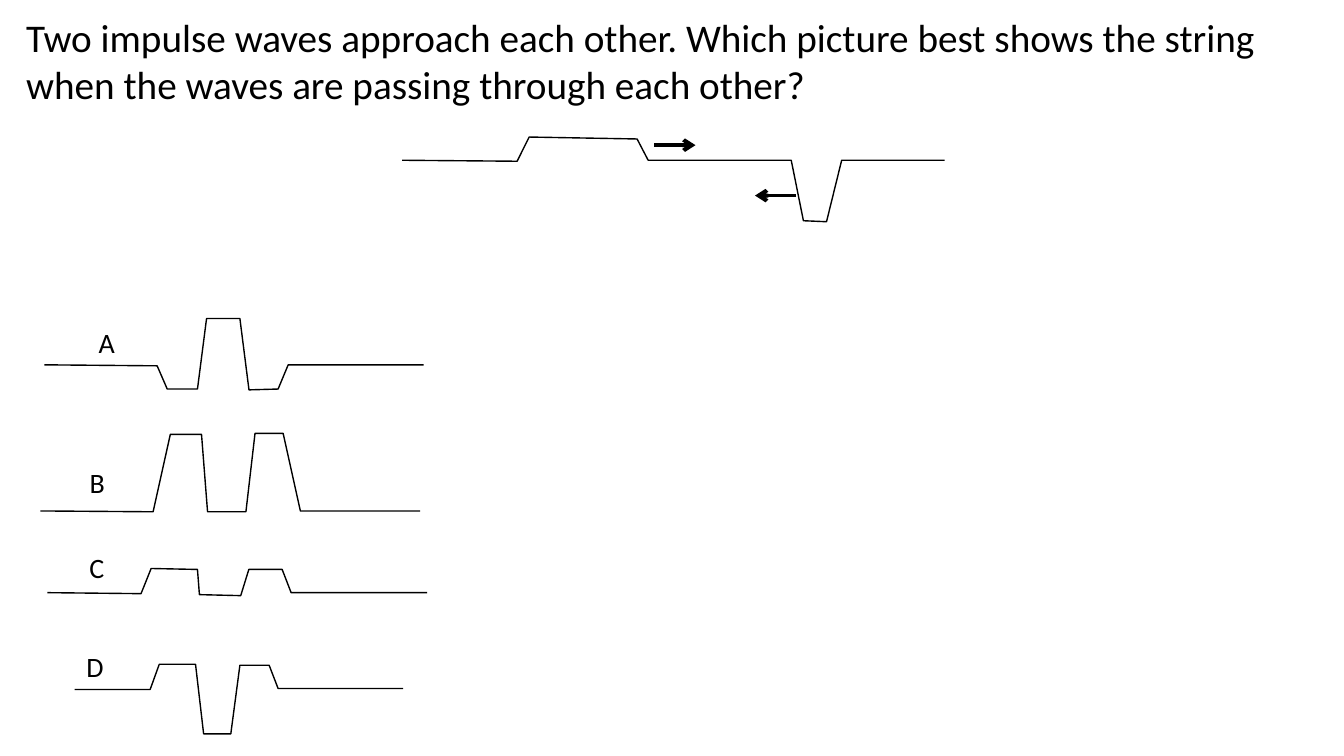
from dataclasses import dataclass

from lxml import etree
from pptx import Presentation
from pptx.dml.color import RGBColor
from pptx.enum import shapes, text
from pptx.oxml import ns
from pptx.util import Pt


@dataclass(frozen=True)
class Theme:
    ink: RGBColor = RGBColor(0, 0, 0)
    paper: RGBColor = RGBColor(255, 255, 255)
    font: str = "Calibri"
    question: float = 28
    label: float = 20
    string: float = 1
    arrow: float = 2.75


THEME = Theme()
QUESTION = ("Two impulse waves approach each other. Which picture best shows "
            "the string when the waves are passing through each other?")

# Corners of each string, measured from the top left of its box
APPROACHING = [(0, 16.6), (82.1, 17.3), (90.7, 0), (167.8, 1.4), (175.7, 16.6),
               (277.9, 16.6), (286.6, 59.8), (303.1, 60.5), (313.9, 16.6), (387.4, 16.6)]
# Start x, end x and y of each direction arrow, in the same box
DIRECTIONS = [(180, 209.5, 5.8), (281.5, 252, 41.8)]

# Letter, box corner, label offset, string corners
OPTIONS = [
    ("A", (31.7, 227.5), (31.7, 1.4),
     [(0, 33.1), (80.6, 33.8), (87.8, 50.4), (109.4, 50.4), (115.9, 0),
      (139.7, 0), (146.2, 51), (167, 50.4), (174.2, 33.1), (271, 33.1)]),
    ("B", (28.8, 309.6), (28.1, 19.4),
     [(0, 55.4), (80.6, 56), (92.9, 0.7), (115.2, 0.7), (119.5, 56),
      (146.9, 56), (153.4, 0), (173.5, 0), (185.8, 55.4), (271.4, 55.4)]),
    ("C", (33.8, 406.1), (23, -16.6),
     [(0, 17.3), (67, 18), (74.2, 0), (107.3, 0.7), (108.7, 18.7),
      (138.2, 19.4), (144, 0.7), (167.8, 0.7), (174.2, 17.3), (271.4, 17.3)]),
    ("D", (53.3, 474.5), (1.4, -14.4),
     [(0, 18), (54, 18), (60.5, 0), (86.4, 0), (92.2, 49.7),
      (111.6, 49.7), (118.1, 0.7), (139, 0.7), (145.4, 17.3), (234.7, 17.3)]),
]


def set_all(target, values):
    for name, value in values.items():
        setattr(target, name, value)


def write(sp, content, size, wrap):
    tf = sp.text_frame
    set_all(tf, {"word_wrap": wrap, "vertical_anchor": text.MSO_ANCHOR.TOP,
                 "auto_size": text.MSO_AUTO_SIZE.SHAPE_TO_FIT_TEXT})
    p = tf.paragraphs[0]
    set_all(p, {"alignment": text.PP_ALIGN.LEFT, "line_spacing": 1.0, "space_before": Pt(0)})
    r = p.add_run()
    r.text = content
    set_all(r.font, {"name": THEME.font, "size": Pt(size)})
    r.font.color.rgb = THEME.ink


def ink_line(sp, width):
    sp.line.color.rgb = THEME.ink
    sp.line.width = Pt(width)


def add_string(s, x, y, corners):
    points = [(Pt(x + dx), Pt(y + dy)) for dx, dy in corners]
    builder = s.shapes.build_freeform(*points[0])
    builder.add_line_segments(points[1:], close=False)
    sp = builder.convert_to_shape()
    sp.shadow.inherit = False
    sp.fill.background()
    ink_line(sp, THEME.string)


def add_arrow(s, x1, x2, y):
    sp = s.shapes.add_connector(shapes.MSO_CONNECTOR.STRAIGHT, Pt(x1), Pt(y), Pt(x2), Pt(y))
    ink_line(sp, THEME.arrow)
    etree.SubElement(sp.line._get_or_add_ln(), ns.qn("a:tailEnd"), type="arrow")
    etree.SubElement(sp._element.spPr, ns.qn("a:effectLst"))


def add_question(s, x, y, w, h):
    sp = s.shapes.title
    set_all(sp, {"left": Pt(x), "top": Pt(y), "width": Pt(w), "height": Pt(h)})
    write(sp, QUESTION, THEME.question, True)


def add_approach(s, x, y):
    add_string(s, x, y, APPROACHING)
    for start, end, dy in DIRECTIONS:
        add_arrow(s, x + start, x + end, y + dy)


def add_option(s, x, y, letter, offset, corners):
    dx, dy = offset
    sp = s.shapes.add_textbox(Pt(x + dx), Pt(y + dy), Pt(25), Pt(31.5))
    sp.fill.solid()
    sp.fill.fore_color.rgb = THEME.paper
    write(sp, letter, THEME.label, False)
    add_string(s, x, y, corners)


def main():
    prs = Presentation()
    set_all(prs, {"slide_width": Pt(960), "slide_height": Pt(540)})
    s = prs.slides.add_slide(prs.slide_layouts[5])

    # Question
    add_question(s, 11.5, 5.8, 939, 75)

    # Answer options
    for letter, (x, y), offset, corners in OPTIONS:
        add_option(s, x, y, letter, offset, corners)

    # Waves approaching each other
    add_approach(s, 287.3, 97.9)

    prs.save("out.pptx")


if __name__ == "__main__":
    main()
